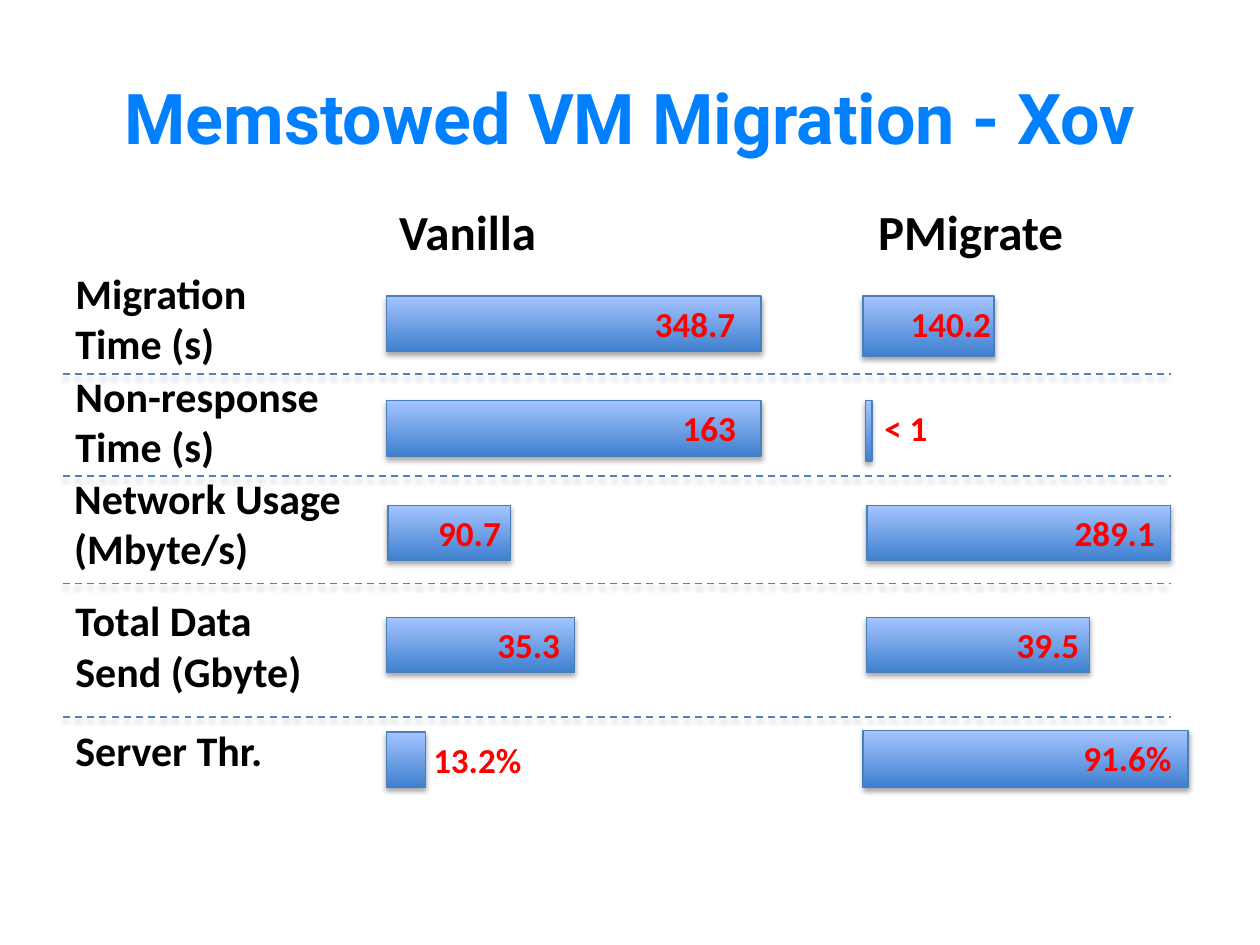
from pptx import Presentation
from pptx.dml.color import RGBColor
from pptx.enum.dml import MSO_LINE_DASH_STYLE as Dash
from pptx.enum.shapes import MSO_CONNECTOR_TYPE as Connector, MSO_SHAPE as Preset
from pptx.enum.text import MSO_ANCHOR as Anchor, MSO_AUTO_SIZE as AutoSize, PP_ALIGN as Align
from pptx.oxml.ns import qn
from pptx.util import Inches, Pt
from lxml.etree import SubElement

WIDTH, HEIGHT = Inches(10), Inches(7.5)
GRID_COLUMNS, GRID_ROWS = 100, 75

BLUE = RGBColor(0x00, 0x80, 0xFF)
BLACK = RGBColor(0x00, 0x00, 0x00)
RED = RGBColor(0xFF, 0x00, 0x00)
BAR_BOTTOM = RGBColor(0x3F, 0x80, 0xCE)
BAR_TOP = RGBColor(0xA4, 0xC4, 0xFF)
BAR_OUTLINE = RGBColor(0x4B, 0x7E, 0xBC)
DIVIDER = RGBColor(0x4F, 0x81, 0xBD)

TITLE_FONT = {"name": "Roboto", "size": Pt(40), "bold": True}
HEADING_FONT = {"name": "Calibri", "size": Pt(28), "bold": True}
LABEL_FONT = {"name": "Calibri", "size": Pt(24), "bold": True}
VALUE_FONT = {"name": "Calibri", "size": Pt(20), "bold": True}
GROWING = {"word_wrap": True, "auto_size": AutoSize.SHAPE_TO_FIT_TEXT}
UNWRAPPED = {**GROWING, "word_wrap": False}
CENTRED = {"word_wrap": True, "vertical_anchor": Anchor.MIDDLE}

HEADINGS = [("Vanilla", 30.7), ("PMigrate", 68.7)]
LABELS = [
    ("Migration Time (s)", (5, 20.7, 21.9, 9.1)),
    ("Non-response Time (s)", (5, 28.9, 21.9, 9.1)),
    ("Network Usage\n(Mbyte/s)", (4.9, 37, 26, 9.1)),
    ("Total Data Send (Gbyte)", (5, 46.7, 21.9, 9.1)),
    ("Server Thr.", (5, 57, 23.3, 5)),
]
BARS = [
    ("348.7", (30.7, 23.5, 29.7, 4.4), 51, 10, GROWING),
    ("140.2", (68.5, 23.5, 10.4, 4.8), 71.3, 11.4, GROWING),
    ("163", (30.7, 31.8, 29.7, 4.4), 53.2, 6.4, GROWING),
    ("< 1", (68.7, 31.8, 0.5, 4.8), 69.2, 9.7, GROWING),
    ("90.7", (30.8, 40.1, 9.7, 4.4), 33.8, 11.3, GROWING),
    ("289.1", (68.8, 40.1, 24.1, 4.4), 84.3, 10.2, GROWING),
    ("35.3", (30.7, 49, 14.9, 4.4), 38.5, 7, UNWRAPPED),
    ("39.5", (68.8, 49, 17.7, 4.4), 79.7, 9.2, GROWING),
    ("13.2%", (30.7, 58.1, 3.1, 4.4), 33.4, 9.8, GROWING),
    ("91.6%", (68.5, 58, 25.8, 4.5), 85, 11.2, UNWRAPPED),
]
DIVIDER_ROWS = [29.7, 37.8, 46.3, 56.9]


def column(count):
    return round(WIDTH * count / GRID_COLUMNS)


def row(count):
    return round(HEIGHT * count / GRID_ROWS)


def cells(left, top, width, height):
    return column(left), row(top), column(width), row(height)


def set_format(target, values):
    for name, value in values.items():
        setattr(target, name, value)


def add_shadow(shape, distance, opacity):
    effects = SubElement(shape._element.spPr, qn("a:effectLst"))
    shadow = SubElement(
        effects, qn("a:outerShdw"), blurRad=str(Pt(3.1)), dist=str(Pt(distance)),
        dir="5400000", rotWithShape="0",
    )
    color = SubElement(shadow, qn("a:srgbClr"), val="000000")
    SubElement(color, qn("a:alpha"), val=str(opacity * 1000))


def add_text(shapes, text, place, font, color, frame_format=GROWING, alignment=Align.LEFT):
    frame = shapes.add_textbox(*cells(*place)).text_frame
    frame.text = text
    set_format(frame, frame_format)
    for paragraph in frame.paragraphs:
        paragraph.alignment = alignment
        set_format(paragraph.runs[0].font, font)
        paragraph.runs[0].font.color.rgb = color


def add_bar(slide, value, place, value_left, value_width, frame_format):
    group = slide.shapes.add_group_shape()
    bar = group.shapes.add_shape(Preset.RECTANGLE, *cells(*place))
    bar.fill.gradient()
    bar.fill.gradient_angle = 90
    for stop, color in zip(bar.fill.gradient_stops, (BAR_BOTTOM, BAR_TOP)):
        stop.color.rgb = color
    bar.line.color.rgb = BAR_OUTLINE
    bar.line.width = Pt(0.75)
    add_shadow(bar, 1.8, 35)
    value_place = (value_left, place[1], value_width, 4.4)
    add_text(group.shapes, value, value_place, VALUE_FONT, RED, frame_format)


def add_divider(slide, top):
    divider = slide.shapes.add_connector(
        Connector.STRAIGHT, column(5), row(top), column(92.9), row(top)
    )
    divider.line.color.rgb = DIVIDER
    set_format(divider.line, {"width": Pt(1), "dash_style": Dash.DASH})
    add_shadow(divider, 1.6, 38)


def main():
    presentation = Presentation()
    set_format(presentation, {"slide_width": WIDTH, "slide_height": HEIGHT})
    slide = presentation.slides.add_slide(presentation.slide_layouts[6])

    add_text(slide.shapes, "Memstowed VM Migration - Xov", (0, 3, 100, 12.5),
             TITLE_FONT, BLUE, CENTRED, Align.CENTER)
    for heading, left in HEADINGS:
        add_text(slide.shapes, heading, (left, 15.5, 21.9, 5.7), HEADING_FONT, BLACK)
    for label, place in LABELS:
        add_text(slide.shapes, label, place, LABEL_FONT, BLACK)
    for bar in BARS:
        add_bar(slide, *bar)
    for top in DIVIDER_ROWS:
        add_divider(slide, top)

    presentation.save("out.pptx")


if __name__ == "__main__":
    main()
